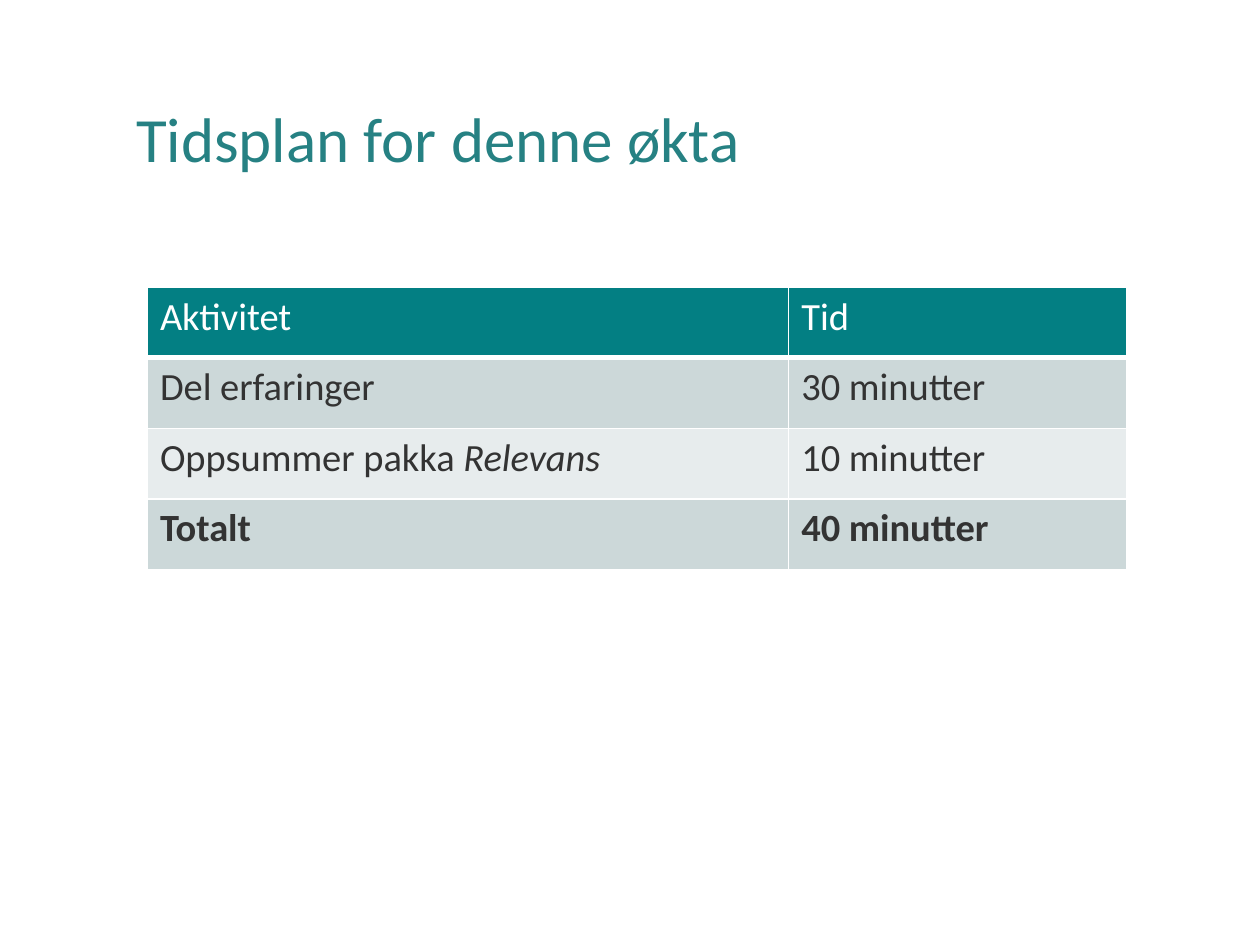
from lxml.etree import SubElement
from pptx import Presentation
from pptx.dml.color import RGBColor
from pptx.enum.text import MSO_ANCHOR, PP_ALIGN
from pptx.oxml.ns import qn
from pptx.util import Inches, Pt

FONT = "Calibri"
TITLE_TEAL = RGBColor(0x26, 0x81, 0x83)
HEADER_TEAL = RGBColor(0x03, 0x7F, 0x83)
BANDS = [RGBColor(0xCC, 0xD8, 0xD9), RGBColor(0xE7, 0xEC, 0xED)]
INK = RGBColor(0x33, 0x33, 0x33)
WHITE = RGBColor(0xFF, 0xFF, 0xFF)

TITLE = "Tidsplan for denne økta"
SCHEDULE = [
    ("Aktivitet", "Tid"),
    ("Del erfaringer", "30 minutter"),
    ("Oppsummer pakka *Relevans", "10 minutter"),
    ("Totalt", "40 minutter"),
]
COLUMN_WIDTHS = [5.09, 2.68]
ROW_HEIGHT = 0.56


def style_font(font, size, color, bold=False, italic=False):
    font.name, font.size, font.color.rgb = FONT, Pt(size), color
    font.bold, font.italic = bold, italic


def add_borders(cell, bottom_width):
    properties = cell._tc.get_or_add_tcPr()
    widths = {"a:lnL": 1, "a:lnR": 1, "a:lnT": 1, "a:lnB": bottom_width}
    for side, width in widths.items():
        border = SubElement(properties, qn(side), w=str(Pt(width)))
        fill = SubElement(border, qn("a:solidFill"))
        SubElement(fill, qn("a:srgbClr"), val=str(WHITE))


def fill_cell(cell, text, row):
    header, total = row == 0, row == len(SCHEDULE) - 1
    add_borders(cell, 3 if header else 1)
    cell.fill.solid()
    cell.fill.fore_color.rgb = HEADER_TEAL if header else BANDS[(row - 1) % 2]
    paragraph = cell.text_frame.paragraphs[0]
    for part, words in enumerate(text.split("*")):
        run = paragraph.add_run()
        run.text = words
        style_font(run.font, 22, WHITE if header else INK, total, part == 1)


def main():
    prs = Presentation()
    prs.slide_width, prs.slide_height = Inches(10), Inches(7.5)
    slide = prs.slides.add_slide(prs.slide_layouts[5])

    title = slide.shapes.title
    title.left, title.top = Inches(0.98), Inches(0.4)
    title.width, title.height = Inches(8.29), Inches(1.45)
    title.text_frame.text = TITLE
    title.text_frame.vertical_anchor = MSO_ANCHOR.MIDDLE
    heading = title.text_frame.paragraphs[0]
    heading.alignment = PP_ALIGN.LEFT
    heading.line_spacing = 0.9
    style_font(heading.runs[0].font, 36, TITLE_TEAL)

    schedule = slide.shapes.add_table(
        len(SCHEDULE), len(COLUMN_WIDTHS), Inches(1.17), Inches(2.28),
        Inches(sum(COLUMN_WIDTHS)), Inches(ROW_HEIGHT * len(SCHEDULE))).table
    for column, width in zip(schedule.columns, COLUMN_WIDTHS):
        column.width = Inches(width)
    for row, texts in enumerate(SCHEDULE):
        for column, text in enumerate(texts):
            fill_cell(schedule.cell(row, column), text, row)

    prs.save("out.pptx")


if __name__ == "__main__":
    main()
